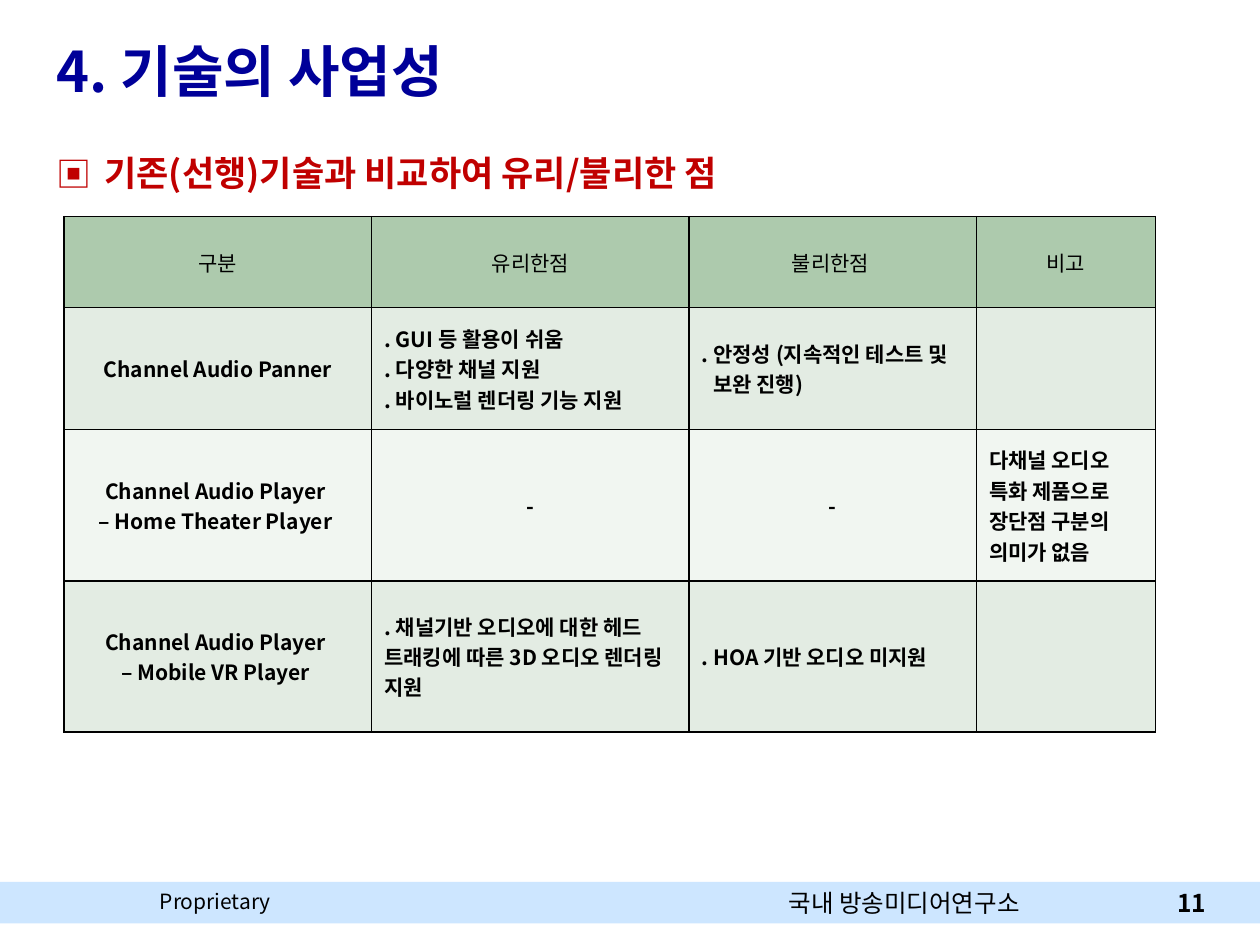
from lxml import etree
from pptx import Presentation, util as u
from pptx.dml.color import RGBColor
from pptx.enum import shapes, text
from pptx.oxml.ns import qn

FONT = "Noto Sans CJK KR"
COLORS = {
    "title": "000099", "heading": "C00000", "ink": "000000", "footer": "CDE6FF",
    "header": "ADCAAD", "odd": "E3ECE3", "even": "F1F6F1",
}
LEFT, CENTER, RIGHT = text.PP_ALIGN.LEFT, text.PP_ALIGN.CENTER, text.PP_ALIGN.RIGHT
MIDDLE = text.MSO_ANCHOR.MIDDLE


def write(frame, words, size, color="ink", bold=False, align=LEFT):
    frame.text = words
    for paragraph in frame.paragraphs:
        paragraph.alignment = align
        for run in paragraph.runs:
            run.font.size = u.Pt(size)
            run.font.bold = bold
            run.font.name = FONT
            run.font.color.rgb = RGBColor.from_string(COLORS[color])
            etree.SubElement(run.font._element, qn("a:ea"), typeface=FONT)


def add_text(left, top, width, height, words, size, wrap=True, **style):
    box = slide.shapes.add_textbox(*map(u.Inches, (left, top, width, height)))
    box.text_frame.word_wrap = wrap
    write(box.text_frame, words, size, **style)
    return box.text_frame


prs = Presentation()
prs.slide_width, prs.slide_height = u.Inches(10), u.Inches(7.5)
slide = prs.slides.add_slide(prs.slide_layouts[5])

footer_top, footer_height = 7, 0.33
footer = slide.shapes.add_shape(
    shapes.MSO_SHAPE.RECTANGLE, 0, u.Inches(footer_top), prs.slide_width, u.Inches(footer_height))
footer.shadow.inherit = False
footer.fill.solid()
footer.fill.fore_color.rgb = RGBColor.from_string(COLORS["footer"])
footer.line.fill.background()

title = slide.shapes.title
title.left, title.top, title.width, title.height = map(u.Inches, (0.35, 0.24, 8.5, 0.63))
title.text_frame.auto_size = text.MSO_AUTO_SIZE.NONE
title.text_frame.vertical_anchor = MIDDLE
write(title.text_frame, "4. 기술의 사업성", 32, "title", True)

heading = add_text(0.35, 1.15, 9.29, 0.5, "기존(선행)기술과 비교하여 유리/불리한 점", 20,
                   color="heading", bold=True)
bullet = heading.paragraphs[0]._p.get_or_add_pPr()
bullet.set("marL", str(u.Inches(0.38)))
bullet.set("indent", str(-u.Inches(0.38)))
bullet_color = etree.SubElement(bullet, qn("a:buClr"))
etree.SubElement(bullet_color, qn("a:srgbClr"), val=COLORS["heading"])
etree.SubElement(bullet, qn("a:buFont"), typeface=FONT)
etree.SubElement(bullet, qn("a:buChar"), char="▣")

comparison = [
    ["구분", "유리한점", "불리한점 ", "비고"],
    ["Channel Audio Panner",
     ". GUI 등 활용이 쉬움\n. 다양한 채널 지원\n. 바이노럴 렌더링 기능 지원",
     ". 안정성 (지속적인 테스트 및 보완 진행)", ""],
    ["Channel Audio Player \n– Home Theater Player ", "-", "-",
     "다채널 오디오 특화 제품으로 장단점 구분의 의미가 없음"],
    ["Channel Audio Player \n– Mobile VR Player ",
     ". 채널기반 오디오에 대한 헤드 트래킹에 따른 3D 오디오 렌더링 지원",
     ". HOA 기반 오디오 미지원", ""],
]
col_widths = [2.44, 2.52, 2.28, 1.42]
row_heights = [0.72, 0.97, 1.2, 1.2]
table = slide.shapes.add_table(
    len(row_heights), len(col_widths), u.Inches(0.51), u.Inches(1.72),
    u.Inches(sum(col_widths)), u.Inches(sum(row_heights))).table
for column, width in zip(table.columns, col_widths):
    column.width = u.Inches(width)
for row, height in zip(table.rows, row_heights):
    row.height = u.Inches(height)

for r, entries in enumerate(comparison):
    for c, words in enumerate(entries):
        cell = table.cell(r, c)
        cell.vertical_anchor = MIDDLE
        centered = r == 0 or c == 0 or words == "-"
        write(cell.text_frame, words, 12, bold=r > 0, align=CENTER if centered else LEFT)
        if r == 1 and c in (1, 2):
            for point in cell.text_frame.paragraphs:
                hanging = point._p.get_or_add_pPr()
                hanging.set("marL", str(u.Inches(0.09)))
                hanging.set("indent", str(-u.Inches(0.09)))
        for side in ("lnL", "lnR", "lnT", "lnB"):
            border = etree.SubElement(cell._tc.get_or_add_tcPr(), qn(f"a:{side}"), w=str(u.Pt(1)))
            border_fill = etree.SubElement(border, qn("a:solidFill"))
            etree.SubElement(border_fill, qn("a:srgbClr"), val=COLORS["ink"])
        shade = "header" if r == 0 else "odd" if r % 2 else "even"
        cell.fill.solid()
        cell.fill.fore_color.rgb = RGBColor.from_string(COLORS[shade])

add_text(1.17, footer_top, 1.33, 0.3, "Proprietary", 12)
add_text(6.16, footer_top, 2.64, footer_height, "국내 방송미디어연구소", 14)
page = add_text(9.19, footer_top, 0.48, footer_height, "11", 14, wrap=False, bold=True, align=RIGHT)
page.vertical_anchor = MIDDLE

prs.save("out.pptx")
